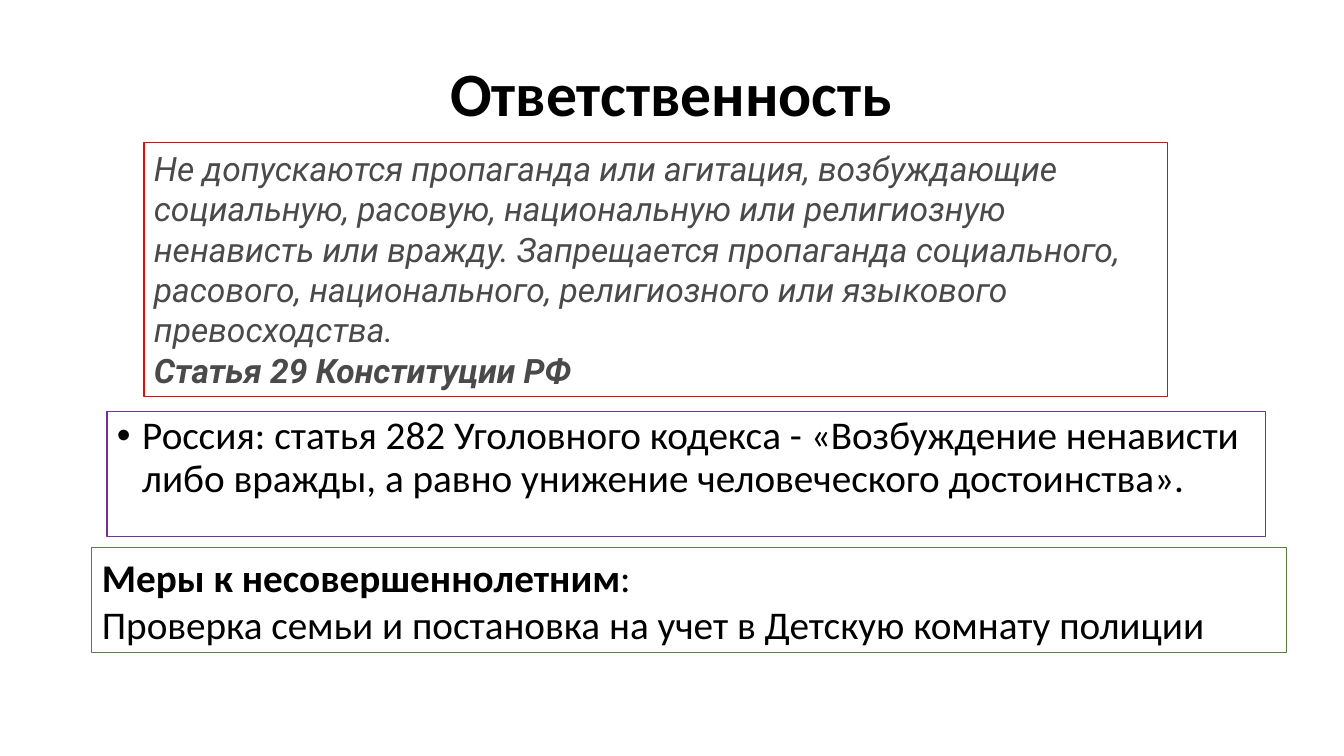
import pptx
import pptx.util
import pptx.dml.color
import pptx.enum.shapes
import pptx.enum.text
import pptx.oxml.ns
import lxml.etree

PX = 914400 / 100.8
COLORS = {"black": "000000", "gray": "4A4A4A", "red": "FF0000",
          "purple": "7030A0", "green": "548235"}

TITLE = {"text": "Ответственность", "at": (92, 40, 1159, 113)}
# Each paragraph is a list of (text, bold) runs.
BOXES = [
    {"at": (107, 411, 1159, 126), "line": "purple", "bullet": True,
     "font": ("Calibri", 28, "black", False),
     "paragraphs": [[("Россия: статья 282 Уголовного кодекса - «Возбуждение ненависти "
                      "либо вражды, а равно унижение человеческого достоинства».", False)]]},
    {"at": (144, 143, 1024, 254), "line": "red", "bullet": False,
     "font": ("Roboto", 24, "gray", True),
     "paragraphs": [[("Не допускаются пропаганда или агитация, возбуждающие социальную, "
                      "расовую, национальную или религиозную ненависть или вражду. "
                      "Запрещается пропаганда социального, расового, национального, "
                      "религиозного или языкового превосходства.", False)],
                    [("Статья 29 Конституции РФ", True)]]},
    {"at": (92, 548, 1195, 105), "line": "green", "bullet": False,
     "font": ("Calibri", 28, "black", False),
     "paragraphs": [[("Меры к несовершеннолетним", True), (":", False)],
                    [("Проверка семьи и постановка на учет в Детскую комнату полиции", False)]]},
]


def emu(px):
    return pptx.util.Emu(round(px * PX))


def rgb(name):
    return pptx.dml.color.RGBColor.from_string(COLORS[name])


def set_all(obj, values):
    for name, value in values.items():
        setattr(obj, name, value)


def add_run(p, text, font, bold):
    name, size, color, italic = font
    r = p.add_run()
    r.text = text
    set_all(r.font, {"name": name, "size": pptx.util.Pt(size), "bold": bold, "italic": italic})
    r.font.color.rgb = rgb(color)


def add_bullet(p):
    set_all(p, {"line_spacing": 0.9, "space_before": pptx.util.Pt(10)})
    pPr = p._p.get_or_add_pPr()
    indent = pptx.util.Inches(0.25)
    pPr.set("marL", str(indent))
    pPr.set("indent", str(-indent))
    qn = pptx.oxml.ns.qn
    lxml.etree.SubElement(pPr, qn("a:buFont"), typeface="Arial")
    lxml.etree.SubElement(pPr, qn("a:buChar"), char="•")


def add_title(slide):
    sp = slide.shapes.title
    set_all(sp, dict(zip(("left", "top", "width", "height"), map(emu, TITLE["at"]))))
    tf = sp.text_frame
    set_all(tf, {"word_wrap": True, "auto_size": pptx.enum.text.MSO_AUTO_SIZE.NONE,
                 "vertical_anchor": pptx.enum.text.MSO_ANCHOR.MIDDLE})
    p = tf.paragraphs[0]
    set_all(p, {"alignment": pptx.enum.text.PP_ALIGN.CENTER, "line_spacing": 0.9})
    add_run(p, TITLE["text"], ("Calibri", 44, "black", False), True)


def add_box(slide, box):
    sp = slide.shapes.add_shape(pptx.enum.shapes.MSO_SHAPE.RECTANGLE, *map(emu, box["at"]))
    sp.shadow.inherit = False
    sp.fill.background()
    sp.line.color.rgb = rgb(box["line"])
    sp.line.width = pptx.util.Pt(0.75)
    tf = sp.text_frame
    fit = pptx.enum.text.MSO_AUTO_SIZE
    set_all(tf, {"word_wrap": True, "vertical_anchor": pptx.enum.text.MSO_ANCHOR.TOP,
                 "auto_size": fit.NONE if box["bullet"] else fit.SHAPE_TO_FIT_TEXT})
    for i, runs in enumerate(box["paragraphs"]):
        p = tf.add_paragraph() if i else tf.paragraphs[0]
        p.alignment = pptx.enum.text.PP_ALIGN.LEFT
        if box["bullet"]:
            add_bullet(p)
        for text, bold in runs:
            add_run(p, text, box["font"], bold)


def main():
    prs = pptx.Presentation()
    set_all(prs, {"slide_width": emu(1344), "slide_height": emu(756)})
    slide = prs.slides.add_slide(prs.slide_layouts.get_by_name("Title Only"))
    add_title(slide)
    for box in BOXES:
        add_box(slide, box)
    prs.save("out.pptx")


if __name__ == "__main__":
    main()
